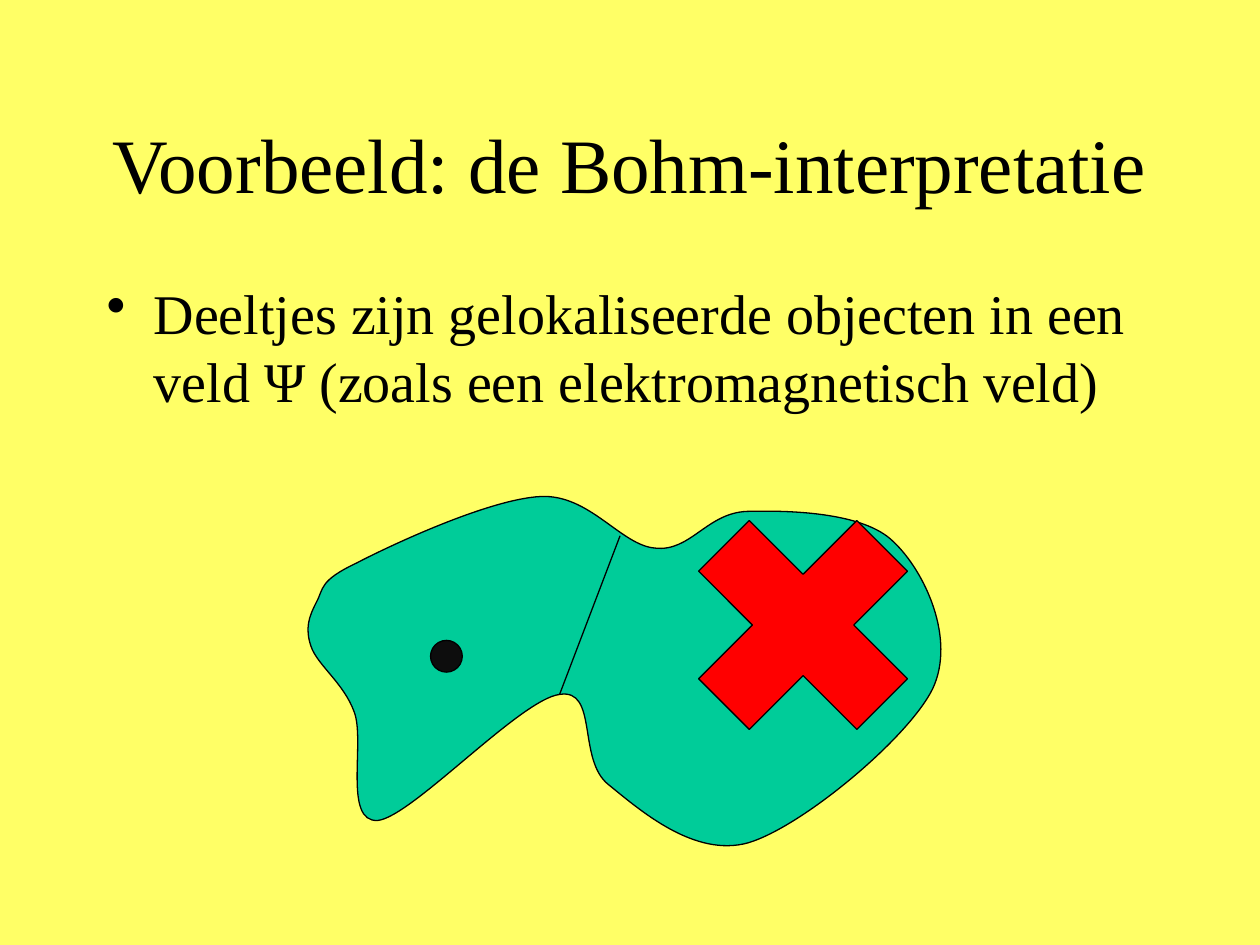
from dataclasses import dataclass, field

import pptx
import pptx.dml.color
import pptx.enum.shapes
import pptx.enum.text
import pptx.oxml
import pptx.oxml.ns
import pptx.util
from pptx.util import Cm

YELLOW = pptx.dml.color.RGBColor(0xFF, 0xFF, 0x66)
GREEN = pptx.dml.color.RGBColor(0x00, 0xCC, 0x99)
RED = pptx.dml.color.RGBColor(0xFF, 0x00, 0x00)
NEAR_BLACK = pptx.dml.color.RGBColor(0x0D, 0x0D, 0x0D)
BLACK = pptx.dml.color.RGBColor(0x00, 0x00, 0x00)

SHAPES = pptx.enum.shapes.MSO_SHAPE
ALIGN = pptx.enum.text.PP_ALIGN
ANCHOR = pptx.enum.text.MSO_ANCHOR
Point = tuple[float, float]


@dataclass
class TextBlock:
    text: str
    top: float
    height: float
    size: int
    anchor: ANCHOR
    paragraph_format: dict = field(default_factory=dict)
    bullet: str = ""


@dataclass
class Marker:
    kind: SHAPES
    left: float
    top: float
    size: float
    colour: pptx.dml.color.RGBColor


TEXT_BLOCKS = [
    TextBlock("Voorbeeld: de Bohm-interpretatie", 1.7, 3.18, 44,
              ANCHOR.MIDDLE, {"alignment": ALIGN.CENTER}),
    TextBlock("Deeltjes zijn gelokaliseerde objecten in een veld Ψ "
              "(zoals een elektromagnetisch veld)", 5.5, 11.43, 32,
              ANCHOR.TOP, {"alignment": ALIGN.LEFT,
                           "space_before": pptx.util.Pt(6.4)}, "•"),
]
MARKERS = [
    Marker(SHAPES.OVAL, 8.68, 12.91, 0.64, NEAR_BLACK),
    Marker(SHAPES.MATH_MULTIPLY, 13.12, 9.53, 6.14, RED),
]

# Each curve: first control point, second control point, end point (cm).
FIELD_START = (7.19, 11.35)
FIELD_CURVES = [
    ((6.43, 11.71), (6.53, 11.86), (6.38, 12.14)),
    ((6.22, 12.45), (6.15, 12.67), (6.27, 13.03)),
    ((6.4, 13.41), (6.93, 13.77), (7.14, 14.35)),
    ((7.37, 14.94), (6.91, 16.59), (7.62, 16.54)),
    ((8.31, 16.46), (10.49, 14.1), (11.28, 14)),
    ((12.07, 13.87), (11.63, 15.32), (12.27, 15.82)),
    ((12.9, 16.33), (14, 17.3), (15.09, 16.99)),
    ((16.18, 16.66), (18.31, 14.88), (18.8, 13.89)),
    ((19.28, 12.88), (18.64, 11.51), (18.01, 10.92)),
    ((17.4, 10.31), (15.85, 10.29), (15.06, 10.31)),
    ((14.25, 10.34), (13.92, 11.13), (13.21, 11.05)),
    ((12.52, 11), (11.89, 9.96), (10.9, 10.01)),
    ((9.88, 10.06), (7.92, 10.97), FIELD_START),
]
DIVIDER = ((11.28, 14), (12.5, 10.8))


def set_attributes(target, values: dict) -> None:
    for name, value in values.items():
        setattr(target, name, value)


def style_line(line) -> None:
    line.color.rgb = BLACK
    line.width = pptx.util.Pt(0.75)


def style_shape(shape, colour: pptx.dml.color.RGBColor) -> None:
    shape.shadow.inherit = False
    shape.fill.solid()
    shape.fill.fore_color.rgb = colour
    style_line(shape.line)


def add_text(page, block: TextBlock) -> None:
    box = page.shapes.add_textbox(Cm(1.9), Cm(block.top), Cm(21.6), Cm(block.height))
    set_attributes(box.text_frame, {"word_wrap": True, "vertical_anchor": block.anchor})
    para = box.text_frame.paragraphs[0]
    set_attributes(para, block.paragraph_format)
    span = para.add_run()
    span.text = block.text
    set_attributes(span.font, {"name": "Times New Roman",
                               "size": pptx.util.Pt(block.size)})
    span.font.color.rgb = BLACK
    if block.bullet:
        properties = para._p.get_or_add_pPr()
        properties.set("marL", str(Cm(0.95)))
        properties.set("indent", str(-Cm(0.95)))
        bullet = pptx.oxml.parse_xml(
            f'<a:buChar {pptx.oxml.ns.nsdecls("a")} char="{block.bullet}"/>')
        properties.append(bullet)


def add_curved_outline(page, start: Point, curves: list[tuple[Point, ...]]):
    """Build a freeform, then merge every three line points into a Bézier curve."""
    points = [(Cm(x), Cm(y)) for curve in curves for x, y in curve]
    builder = page.shapes.build_freeform(Cm(start[0]), Cm(start[1]))
    builder.add_line_segments(points, close=True)
    shape = builder.convert_to_shape()
    lines = list(shape._element.iter(pptx.oxml.ns.qn("a:lnTo")))
    for first in range(0, 3 * len(curves), 3):
        curve = pptx.oxml.parse_xml(f'<a:cubicBezTo {pptx.oxml.ns.nsdecls("a")}/>')
        lines[first].addprevious(curve)
        for line in lines[first:first + 3]:
            curve.append(line[0])
            line.getparent().remove(line)
    return shape


def add_marker(page, marker: Marker) -> None:
    shape = page.shapes.add_shape(marker.kind, Cm(marker.left), Cm(marker.top),
                                  Cm(marker.size), Cm(marker.size))
    style_shape(shape, marker.colour)


def add_line(page, start: Point, end: Point) -> None:
    connector = page.shapes.add_connector(
        pptx.enum.shapes.MSO_CONNECTOR.STRAIGHT, *map(Cm, start + end))
    style_line(connector.line)
    connector._element.spPr.append(
        pptx.oxml.parse_xml(f'<a:effectLst {pptx.oxml.ns.nsdecls("a")}/>'))


def main() -> None:
    deck = pptx.Presentation()
    set_attributes(deck, {"slide_width": Cm(25.4), "slide_height": Cm(19.05)})
    page = deck.slides.add_slide(deck.slide_layouts[6])
    page.background.fill.solid()
    page.background.fill.fore_color.rgb = YELLOW
    for block in TEXT_BLOCKS:
        add_text(page, block)
    style_shape(add_curved_outline(page, FIELD_START, FIELD_CURVES), GREEN)
    for marker in MARKERS:
        add_marker(page, marker)
    add_line(page, *DIVIDER)
    deck.save("out.pptx")


if __name__ == "__main__":
    main()
